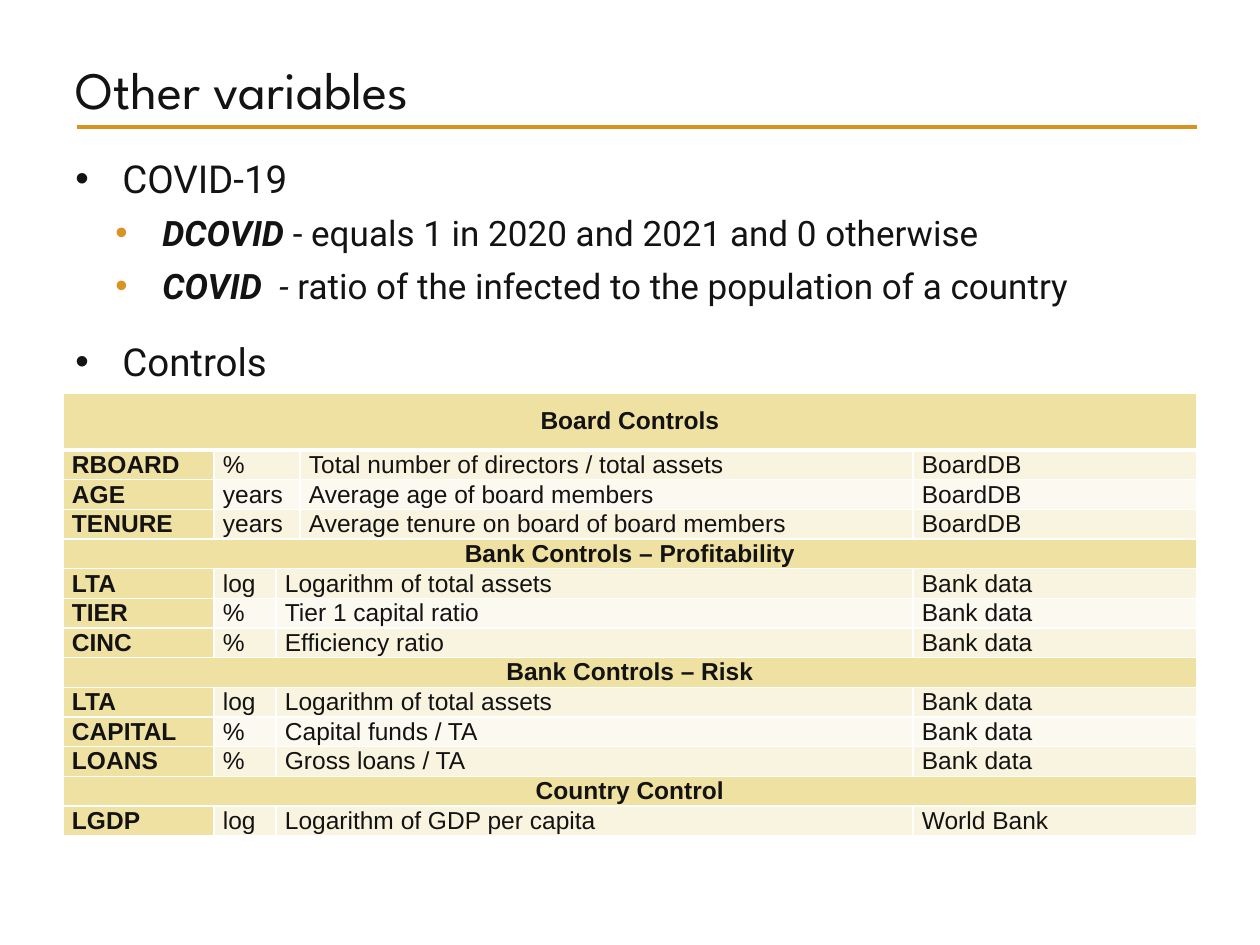
from lxml import etree
from pptx import Presentation
from pptx.dml.color import RGBColor
from pptx.enum.shapes import MSO_CONNECTOR
from pptx.enum.text import MSO_ANCHOR, PP_ALIGN
from pptx.oxml.ns import qn
from pptx.util import Pt

PX = 914400 / 126
STRAIGHT = MSO_CONNECTOR.STRAIGHT
BOTTOM, MIDDLE = MSO_ANCHOR.BOTTOM, MSO_ANCHOR.MIDDLE
LEFT, CENTER = PP_ALIGN.LEFT, PP_ALIGN.CENTER

HEX = {"ink": "141313", "rule": "D99322", "head": "EFE1A2",
       "odd": "F9F4E0", "even": "FCF9F0", "edge": "FFFFFF"}

TITLE = "Other variables"

# level, space after, runs of (text, bold, italic)
POINTS = [
    (1, 0, [("COVID-19", False, False)]),
    (2, 0, [("DCOVID ", True, True),
            ("- equals 1 in 2020 and 2021 and 0 otherwise", False, False)]),
    (2, 12, [("COVID ", True, True), (" - ", False, True),
             ("ratio of the infected to the population of a country", False, False)]),
    (1, 0, [("Controls", False, False)]),
]
# level: font size, indent in px, bullet colour
LEVELS = {1: (22, 47, "ink"), 2: (20, 87, "rule")}
HANG = 47

# heading, whether the unit cell is the wide one, rows
GROUPS = [
    ("Board Controls", True, [
        ("RBOARD", "%", "Total number of directors / total assets", "BoardDB"),
        ("AGE", "years", "Average age of board members", "BoardDB"),
        ("TENURE", "years", "Average tenure on board of board members", "BoardDB")]),
    ("Bank Controls – Profitability", False, [
        ("LTA", "log", "Logarithm of total assets", "Bank data"),
        ("TIER", "%", "Tier 1 capital ratio", "Bank data"),
        ("CINC", "%", "Efficiency ratio", "Bank data")]),
    ("Bank Controls – Risk", False, [
        ("LTA", "log", "Logarithm of total assets", "Bank data"),
        ("CAPITAL", "%", "Capital funds / TA", "Bank data"),
        ("LOANS", "%", "Gross loans / TA", "Bank data")]),
    ("Country Control", False, [
        ("LGDP", "log", "Logarithm of GDP per capita", "World Bank")]),
]
COLS = [151, 62, 24, 613, 284]
TOP_ROW, TABLE_H = 57, 443


def px(n):
    return round(n * PX)


def color(name):
    return RGBColor.from_string(HEX[name])


def style(font, face, size, bold=None):
    font.name, font.size, font.bold = face, Pt(size), bold
    font.color.rgb = color("ink")


def add_box(slide, x, y, w, h):
    frame = slide.shapes.add_textbox(px(x), px(y), px(w), px(h)).text_frame
    frame.word_wrap = True
    return frame


def add_bullet(para, indent, tint):
    props = para._p.get_or_add_pPr()
    props.set("marL", str(px(indent)))
    props.set("indent", str(-px(HANG)))
    hue = etree.SubElement(props, qn("a:buClr"))
    etree.SubElement(hue, qn("a:srgbClr"), val=HEX[tint])
    etree.SubElement(props, qn("a:buFont"), typeface="Arial")
    etree.SubElement(props, qn("a:buChar"), char="•")


def add_points(slide):
    frame = add_box(slide, 63, 149, 1134, 624)
    for i, (level, after, runs) in enumerate(POINTS):
        para = frame.paragraphs[0] if i == 0 else frame.add_paragraph()
        size, indent, tint = LEVELS[level]
        para.level = level - 1
        para.space_before = Pt(6 if i else 0)
        para.space_after = Pt(after)
        add_bullet(para, indent, tint)
        style(para.font, "Roboto", size)
        for text, bold, slant in runs:
            run = para.add_run()
            run.text = text
            run.font.bold, run.font.italic = bold, slant


def set_edges(cell, top, bottom):
    props = cell._tc.get_or_add_tcPr()
    widths = [("a:lnL", 1), ("a:lnR", 1), ("a:lnT", top), ("a:lnB", bottom)]
    for i, (tag, width) in enumerate(widths):
        line = etree.Element(qn(tag), w=str(Pt(width)))
        fill = etree.SubElement(line, qn("a:solidFill"))
        etree.SubElement(fill, qn("a:srgbClr"), val=HEX["edge"])
        props.insert(i, line)


def fill_cell(cell, text, tint, bold, align=LEFT):
    cell.fill.solid()
    cell.fill.fore_color.rgb = color(tint)
    cell.vertical_anchor = MIDDLE
    cell.margin_left = cell.margin_right = px(9)
    cell.margin_top = cell.margin_bottom = 0
    para = cell.text_frame.paragraphs[0]
    para.text, para.alignment = text, align
    style(para.font, "Arial", 14, bold)


def add_controls(slide):
    count = sum(1 + len(rows) for _, _, rows in GROUPS)
    table = slide.shapes.add_table(count, len(COLS), px(63), px(393),
                                   px(sum(COLS)), px(TABLE_H)).table
    for col, width in zip(table.columns, COLS):
        col.width = px(width)
    for i, row in enumerate(table.rows):
        row.height = px((TABLE_H - TOP_ROW) / (count - 1) if i else TOP_ROW)
        for cell in row.cells:
            set_edges(cell, 3 if i == 1 else 1, 3 if i == 0 else 1)
    r = 0
    for heading, wide, rows in GROUPS:
        table.cell(r, 0).merge(table.cell(r, len(COLS) - 1))
        fill_cell(table.cell(r, 0), heading, "head", True, CENTER)
        start = 1 if wide else 2
        places = (0, 1, 3 if wide else 2, 4)
        for k, texts in enumerate(rows):
            r += 1
            table.cell(r, start).merge(table.cell(r, start + 1))
            band = "even" if k % 2 else "odd"
            for c, text in zip(places, texts):
                fill_cell(table.cell(r, c), text, band if c else "head", c == 0)
        r += 1


def main():
    deck = Presentation()
    deck.slide_width, deck.slide_height = px(1260), px(945)
    slide = deck.slides.add_slide(deck.slide_layouts[6])

    rule = slide.shapes.add_connector(STRAIGHT, px(77), px(127), px(1197), px(127))
    rule.line.color.rgb = color("rule")
    rule.line.width = Pt(2)
    etree.SubElement(rule._element.spPr, qn("a:effectLst"))

    title = add_box(slide, 63, 38, 1134, 88)
    title.vertical_anchor = BOTTOM
    title.text = TITLE
    style(title.paragraphs[0].font, "League Spartan", 30)

    add_points(slide)
    add_controls(slide)
    deck.save("out.pptx")


if __name__ == "__main__":
    main()
